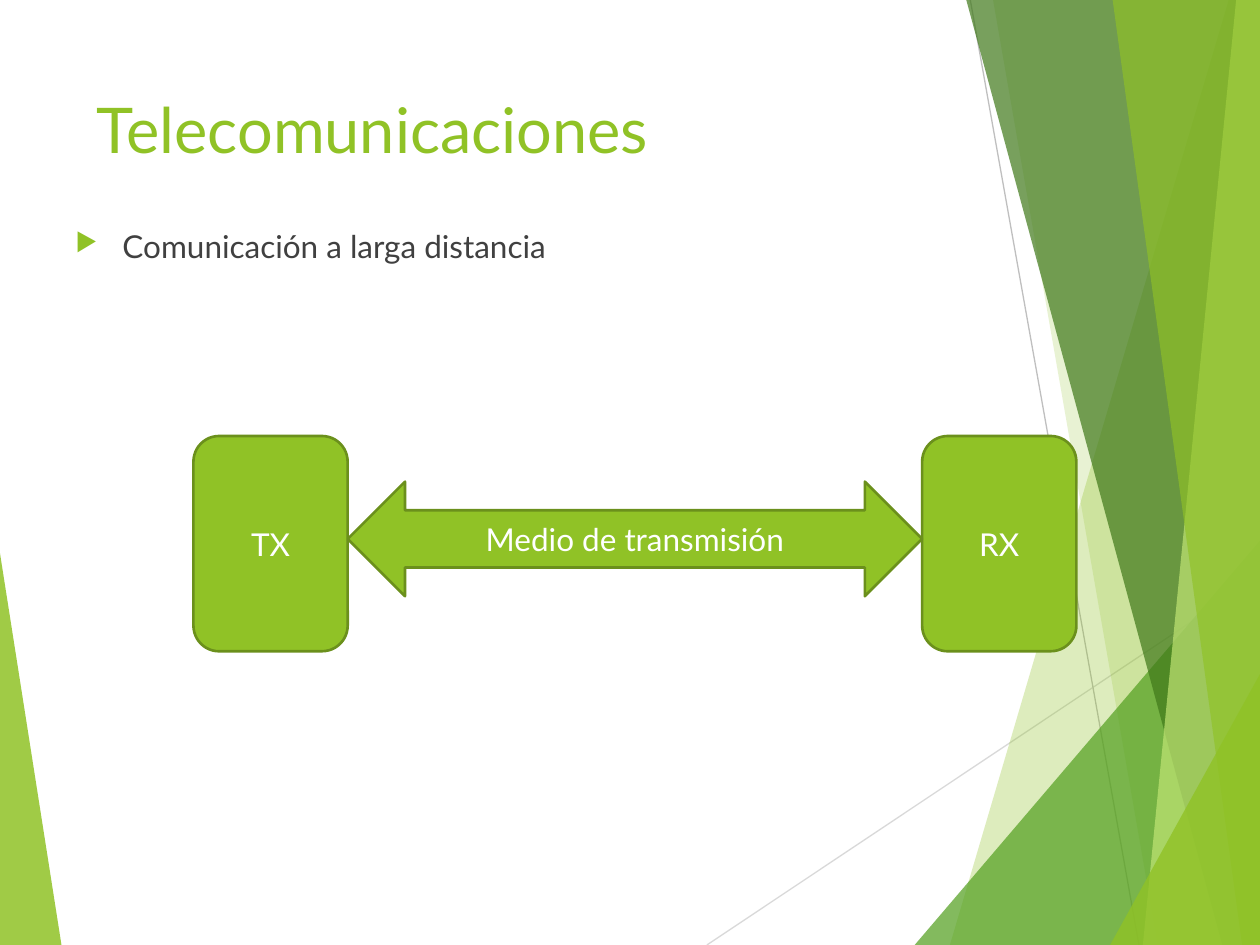
from lxml import etree
from pptx import Presentation
from pptx import util as u
from pptx.dml.color import RGBColor
from pptx.enum import shapes, text
from pptx.oxml import ns

WIDTH, HEIGHT = 25.4, 19.05
GREEN, DARK_GREEN, GREY, WHITE = "90C226", "6B901C", "404040", "FFFFFF"
LEFT_FACET = (0, 11.15, 1.24, 0, GREEN, 85)
RIGHT_FACETS = [
    (24.77, 0, 19.15, WIDTH, GREEN, 30),
    (20.02, 0, 23.34, WIDTH, GREEN, 20),
    (WIDTH, 10.9, 18.44, WIDTH, "54A021", 72),
    (19.48, 0, 24.64, WIDTH, "3F7819", 70),
    (24.92, 0, 23.04, WIDTH, "C0E474", 70),
    (22.43, 0, 25.04, WIDTH, GREEN, 65),
    (WIDTH, 13.59, 22.38, WIDTH, GREEN, 80),
]
RAYS = [
    (14.25, HEIGHT, WIDTH, 11.61, "D9D9D9"),
    (19.56, 0, 22.96, HEIGHT, "BFBFBF"),
]


def colour(value):
    """Return the colour for a hex string."""
    return RGBColor.from_string(value)


def add_element(parent, tag, **attributes):
    """Append a DrawingML element to its parent."""
    return etree.SubElement(parent, ns.qn(tag), attributes)


def set_text(shape, words, size, hue, align, anchor):
    """Write one formatted paragraph into a shape."""
    frame = shape.text_frame
    frame.word_wrap = True
    frame.auto_size = text.MSO_AUTO_SIZE.NONE
    frame.vertical_anchor = anchor
    para = frame.paragraphs[0]
    para.text = words
    para.alignment = align
    para.font.name = "Lato"
    para.font.size = u.Pt(size)
    para.font.color.rgb = colour(hue)
    return para


def add_facet(page, start_x, start_y, end_x, edge, hue, opacity):
    """Draw a translucent facet between a slanted side and a slide edge."""
    corners = [(end_x, HEIGHT), (edge, HEIGHT), (edge, start_y)]
    builder = page.shapes.build_freeform(u.Cm(start_x), u.Cm(start_y))
    builder.add_line_segments([(u.Cm(x), u.Cm(y)) for x, y in corners])
    facet = builder.convert_to_shape()
    facet.shadow.inherit = False
    facet.fill.solid()
    facet.fill.fore_color.rgb = colour(hue)
    facet.line.fill.background()
    tint = facet.fill._xPr.find(".//" + ns.qn("a:srgbClr"))
    add_element(tint, "a:alpha", val=str(opacity * 1000))


def add_ray(page, from_x, from_y, to_x, to_y, hue):
    """Draw a thin straight line."""
    ends = [u.Cm(value) for value in (from_x, from_y, to_x, to_y)]
    ray = page.shapes.add_connector(shapes.MSO_CONNECTOR.STRAIGHT, *ends)
    ray.line.color.rgb = colour(hue)
    ray.line.width = u.Pt(0.75)
    add_element(ray._element.spPr, "a:effectLst")


def add_backdrop(page):
    """Draw the facets and rays along the slide edges."""
    add_facet(page, *LEFT_FACET)
    for ray in RAYS:
        add_ray(page, *ray)
    for facet in RIGHT_FACETS:
        add_facet(page, *facet)


def set_title(page, words):
    """Place and format the title placeholder."""
    title = page.shapes.title
    title.left, title.top = u.Cm(1.7), u.Cm(1.7)
    title.width, title.height = u.Cm(17.63), u.Cm(3.66)
    set_text(title, words, 36, GREEN, text.PP_ALIGN.LEFT, text.MSO_ANCHOR.TOP)


def add_bullet(page, words):
    """Add a text box with one bulleted paragraph."""
    box = page.shapes.add_textbox(u.Cm(1.27), u.Cm(4.45), u.Cm(22.86), u.Cm(2.69))
    para = set_text(box, words, 18, GREY, text.PP_ALIGN.LEFT, text.MSO_ANCHOR.TOP)
    para.space_before = u.Pt(10)
    props = para._p.get_or_add_pPr()
    indent = u.Cm(0.95)
    props.set("marL", str(indent))
    props.set("indent", str(-indent))
    add_element(add_element(props, "a:buClr"), "a:srgbClr", val=GREEN)
    add_element(props, "a:buSzPct", val="80000")
    add_element(props, "a:buChar", char="▶")


def add_block(page, kind, left, top, width, height, words):
    """Add a labelled green shape of the diagram."""
    place = [u.Cm(value) for value in (left, top, width, height)]
    block = page.shapes.add_shape(kind, *place)
    block.shadow.inherit = False
    block.fill.solid()
    block.fill.fore_color.rgb = colour(GREEN)
    block.line.color.rgb = colour(DARK_GREEN)
    block.line.width = u.Pt(1.5)
    set_text(block, words, 18, WHITE, text.PP_ALIGN.CENTER, text.MSO_ANCHOR.MIDDLE)


def add_diagram(page):
    """Draw transmitter, receiver and the medium that joins them."""
    left, top, width, height, gap = 3.9, 8.79, 3.11, 4.34, 11.58
    kinds = shapes.MSO_SHAPE
    for column, words in enumerate(["TX", "RX"]):
        x = left + column * (width + gap)
        add_block(page, kinds.ROUNDED_RECTANGLE, x, top, width, height, words)
    add_block(page, kinds.LEFT_RIGHT_ARROW, left + width, 9.71, gap, 2.31,
              "Medio de transmisión")


def main():
    """Build the slide and save it."""
    deck = Presentation()
    deck.slide_width, deck.slide_height = u.Cm(WIDTH), u.Cm(HEIGHT)
    page = deck.slides.add_slide(deck.slide_layouts.get_by_name("Title Only"))
    add_backdrop(page)
    set_title(page, "Telecomunicaciones")
    add_bullet(page, "Comunicación a larga distancia")
    add_diagram(page)
    deck.save("out.pptx")


if __name__ == "__main__":
    main()
